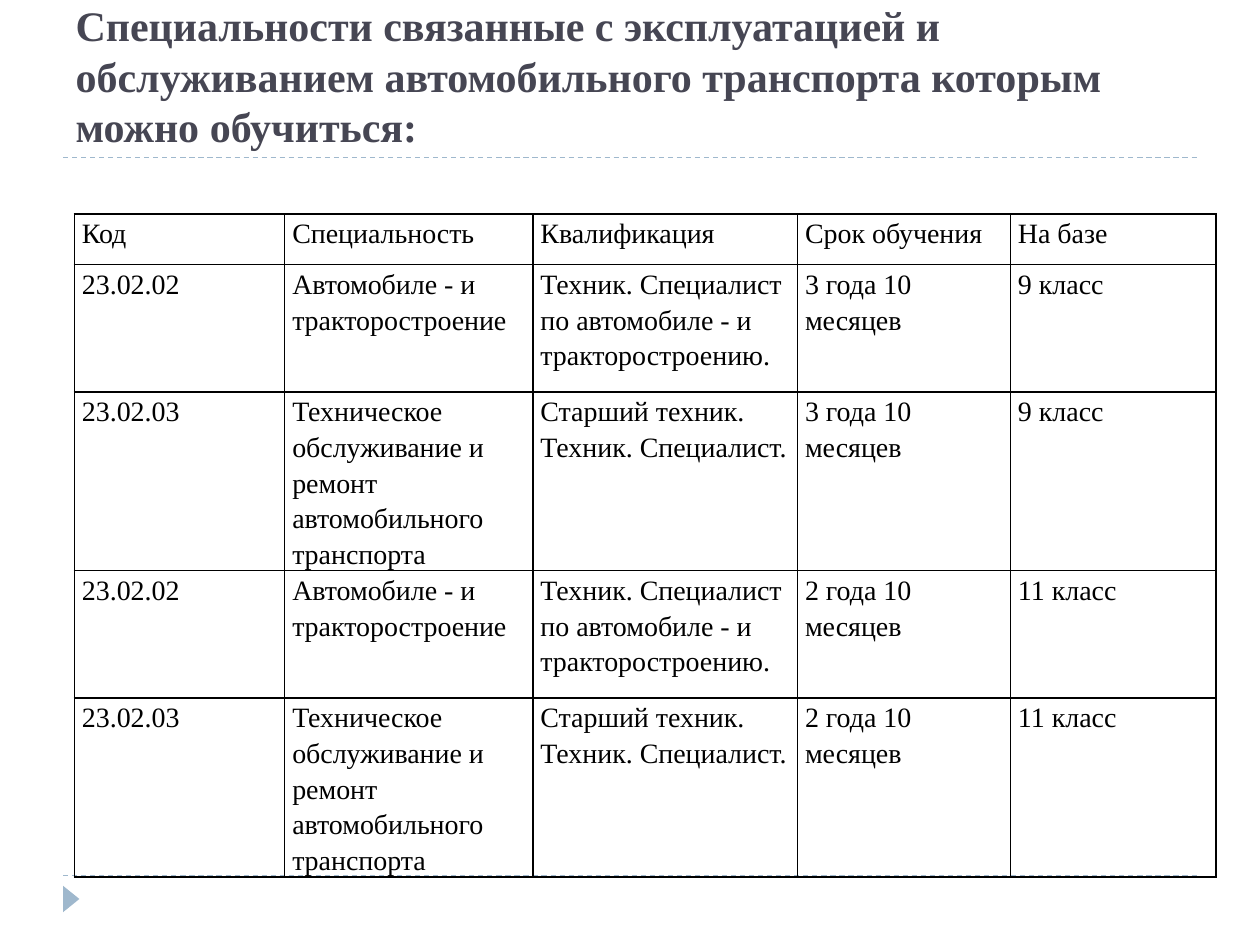
import pptx
import pptx.util
import pptx.dml.color
import pptx.enum.dml
import pptx.enum.shapes
import pptx.enum.text
import pptx.oxml
import pptx.oxml.ns

RGB = pptx.dml.color.RGBColor.from_string
Pt = pptx.util.Pt
THEME = {
    "font": "Times New Roman",
    "title": {"size": Pt(24), "bold": True, "color": "464653"},
    "cell": {"size": Pt(16), "bold": False, "color": "000000"},
    "accent": "9FB8CD",
    "border": "000000",
}

prs = pptx.Presentation()
prs.slide_width, prs.slide_height = pptx.util.Inches(10), pptx.util.Inches(7.5)
s = prs.slides.add_slide(prs.slide_layouts[5])

# Grid of 20 columns by 30 rows
COL, ROW = prs.slide_width / 20, prs.slide_height / 30


def box(x, y, w, h):
    return [round(n) for n in (x * COL, y * ROW, w * COL, h * ROW)]


def write(p, text, style):
    r = p.add_run()
    r.text = text
    r.font.name = THEME["font"]
    r.font.color.rgb = RGB(style["color"])
    for name in ("size", "bold"):
        setattr(r.font, name, style[name])


# Dashed rules above and below the content
for y in (27.8, 5):
    left, top, width, _ = box(1, y, 18, 0)
    rule = s.shapes.add_connector(
        pptx.enum.shapes.MSO_CONNECTOR.STRAIGHT, left, top, left + width, top)
    rule.line.color.rgb = RGB(THEME["accent"])
    rule.line.width = Pt(0.75)
    rule.line.dash_style = pptx.enum.dml.MSO_LINE.DASH
    rule._element.spPr.append(pptx.oxml.parse_xml(
        f'<a:effectLst {pptx.oxml.ns.nsdecls("a")}/>'))

# Footer arrow
arrow = s.shapes.add_shape(
    pptx.enum.shapes.MSO_SHAPE.ISOSCELES_TRIANGLE, *box(0.92, 28.28, 0.42, 0.52))
arrow.rotation = 90
arrow.shadow.inherit = False
arrow.fill.solid()
arrow.fill.fore_color.rgb = RGB(THEME["accent"])
arrow.line.fill.background()

# Title
title = s.shapes.title
for name, value in zip(("left", "top", "width", "height"), box(1, 1, 18, 4)):
    setattr(title, name, value)
tf = title.text_frame
frame = {
    "word_wrap": True,
    "auto_size": pptx.enum.text.MSO_AUTO_SIZE.NONE,
    "vertical_anchor": pptx.enum.text.MSO_ANCHOR.BOTTOM,
}
for name, value in frame.items():
    setattr(tf, name, value)
p = tf.paragraphs[0]
p.alignment = pptx.enum.text.PP_ALIGN.LEFT
write(p, "Специальности связанные с эксплуатацией и обслуживанием "
         "автомобильного транспорта которым можно обучиться:", THEME["title"])

# Table content: both programmes are offered after grade 9 and grade 11
programmes = [
    ("23.02.02", "Автомобиле - и тракторостроение",
     "Техник. Специалист по автомобиле - и тракторостроению."),
    ("23.02.03", "Техническое обслуживание и ремонт автомобильного транспорта",
     "Старший техник. Техник. Специалист."),
]
terms = [("3 года 10 месяцев", "9 класс"), ("2 года 10 месяцев", "11 класс")]
rows = [("Код", "Специальность", "Квалификация", "Срок обучения", "На базе")]
rows += [programme + term for term in terms for programme in programmes]

# Table
widths = [3.34, 3.94, 4.2, 3.38, 3.26]
heights = [1.6, 4.04, 4.04, 4.04, 5.48]
table = s.shapes.add_table(
    len(rows), len(widths), *box(1.18, 6.8, sum(widths), sum(heights))).table
for column, width in zip(table.columns, widths):
    column.width = round(width * COL)
for row, height in zip(table.rows, heights):
    row.height = round(height * ROW)

margin = pptx.util.Inches(0.06)
cell_format = {"margin_left": margin, "margin_right": margin,
               "margin_top": 0, "margin_bottom": 0}
for row, texts in zip(table.rows, rows):
    for cell, text in zip(row.cells, texts):
        for name, value in cell_format.items():
            setattr(cell, name, value)
        for side in "LRTB":
            cell._tc.get_or_add_tcPr().append(pptx.oxml.parse_xml(
                f'<a:ln{side} {pptx.oxml.ns.nsdecls("a")} w="{Pt(1)}"><a:solidFill>'
                f'<a:srgbClr val="{THEME["border"]}"/></a:solidFill></a:ln{side}>'))
        cell.fill.background()
        p = cell.text_frame.paragraphs[0]
        p.line_spacing = 1.15
        write(p, text, THEME["cell"])

prs.save("out.pptx")
